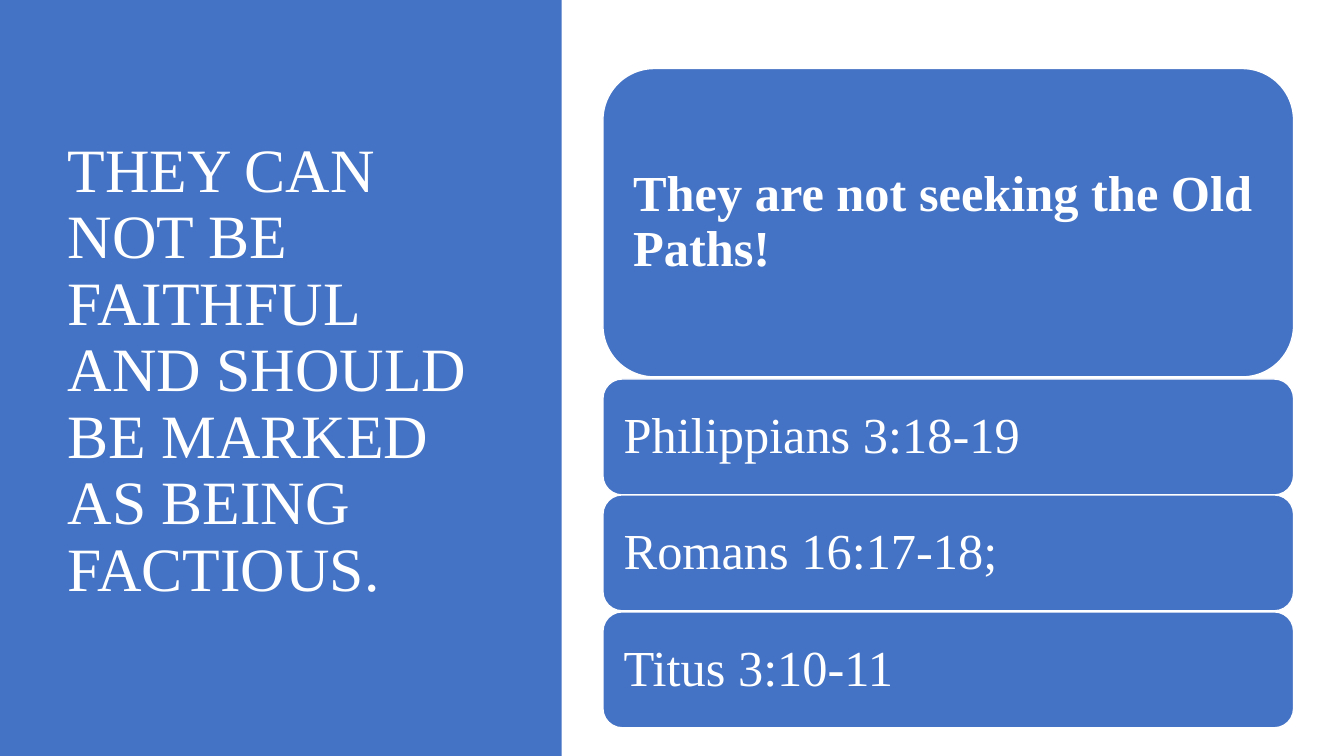
from pptx import Presentation
from pptx.dml.color import RGBColor
from pptx.enum.shapes import MSO_SHAPE as Shape
from pptx.enum.text import MSO_ANCHOR as Anchor, PP_ALIGN as Align
from pptx.util import Pt

PX = 9144  # 100 px to the inch
BLUE, WHITE = "4472C4", "FFFFFF"


def paint(color, code):
    color.rgb = RGBColor.from_string(code)


def write(shape, text, size, inset, bold=False):
    frame = shape.text_frame
    frame.text = text
    frame.word_wrap = True
    frame.vertical_anchor = Anchor.MIDDLE
    frame.margin_left = frame.margin_right = inset[0] * PX
    frame.margin_top = frame.margin_bottom = inset[1] * PX
    para = frame.paragraphs[0]
    para.alignment = Align.LEFT
    para.line_spacing = 0.9
    font = para.runs[0].font
    font.name, font.size, font.bold = "Times New Roman", Pt(size), bold
    paint(font.color, WHITE)


deck = Presentation()
deck.slide_width, deck.slide_height = 1333 * PX, 750 * PX
slide = deck.slides.add_slide(deck.slide_layouts[5])
shapes = slide.shapes
title = shapes.title

# Left panel, placed behind the title
panel = shapes.add_shape(Shape.RECTANGLE, 0, 0, 557 * PX, 750 * PX)
panel.shadow.inherit = False
panel.fill.solid()
paint(panel.fill.fore_color, BLUE)
panel.line.fill.background()
title.element.addprevious(panel.element)

# Title
title.left, title.top = 57 * PX, 68 * PX
title.width, title.height = 416 * PX, 602 * PX
write(title, "THEY CAN NOT BE FAITHFUL AND SHOULD BE MARKED AS BEING FACTIOUS.",
      44, (10, 5))

# Stack of cards: the main point, then its verses
cards = [
    ("They are not seeking the Old Paths!", 68, 306, True),
    ("Philippians 3:18-19", 376, 115, False),
    ("Romans 16:17-18;", 491, 115, False),
    ("Titus 3:10-11", 607, 115, False),
]
for text, top, high, bold in cards:
    card = shapes.add_shape(Shape.ROUNDED_RECTANGLE,
                            598 * PX, top * PX, 685 * PX, high * PX)
    card.shadow.inherit = False
    card.fill.solid()
    paint(card.fill.fore_color, BLUE)
    paint(card.line.color, WHITE)
    card.line.width = Pt(1)
    write(card, text, 36, (15, 15), bold)

deck.save("out.pptx")
